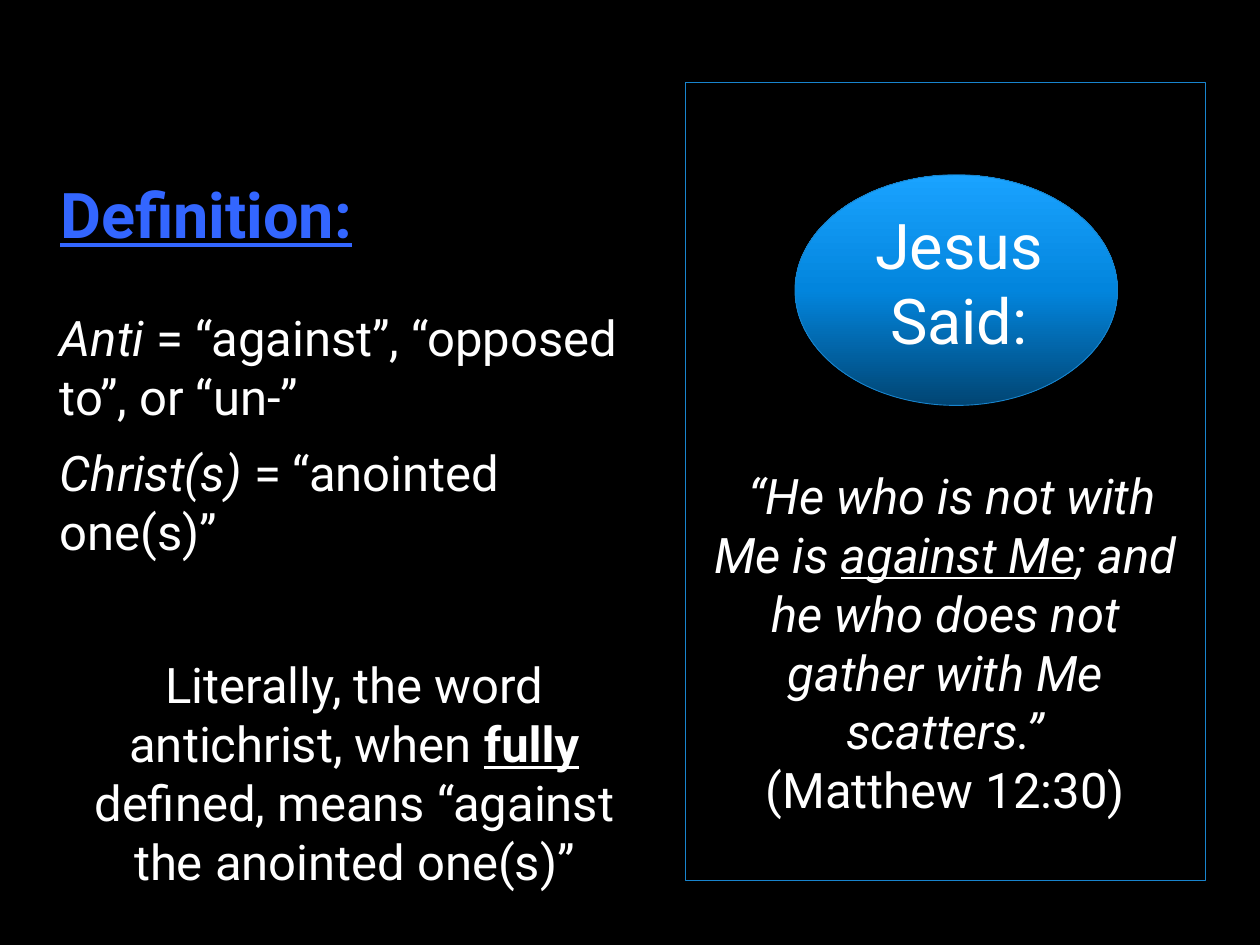
from copy import deepcopy

from pptx import Presentation
from pptx.dml.color import RGBColor
from pptx.enum import shapes, text
from pptx.oxml.ns import qn
from pptx.util import Pt

# Content: paragraphs are (alignment, space before, runs); runs are (text, styles)
FONT = "Roboto"
BLACK, WHITE, HEADING, OUTLINE = "000000", "FFFFFF", "3366FF", "1884CD"
GRADIENT = [(0, "014573"), (0.5, "0285DD"), (1, "1AA3FF")]
LEFT, CENTER = text.PP_ALIGN.LEFT, text.PP_ALIGN.CENTER

TITLE = [(LEFT, 0, [("Definition:", "bu")])]
DEFINITIONS = [
    (LEFT, 0, [("Anti", "i"), (" = “against”, “opposed to”, or “un-”", "")]),
    (LEFT, 10, [("Christ(s)", "i"), (" = “anointed one(s)”", "")]),
    (CENTER, 53.7, [("Literally, the word antichrist, when ", ""), ("fully", "bu"),
                    (" defined, means “against the anointed one(s)”", "")]),
]
SPEAKER = [(CENTER, 0, [("Jesus Said:", "")])]
QUOTE = [
    (CENTER, 0, [("“He who is not with Me is ", "i"), ("against Me", "iu"),
                 ("; and he who does not gather with Me scatters.”", "i")]),
    (CENTER, 0, [("(Matthew 12:30)", "")]),
]

# Places: left, top, width, height in points
TITLE_BOX = (27.2, 55.8, 312.5, 91.4)
DEFINITIONS_BOX = (27.2, 128.6, 350.6, 321.1)
PANEL_BOX = (391.7, 47.1, 297.4, 455.8)
OVAL_BOX = (454.3, 99.9, 184.3, 131.8)
SPEAKER_BOX = (484.3, 114.2, 127.4, 94.3)
QUOTE_BOX = (391.5, 262.5, 297.4, 177.1)
QUOTE_INDENT = 8


def color(value):
    return RGBColor.from_string(value)


def points(box):
    return [Pt(length) for length in box]


def write(shape, paragraphs, size, ink=WHITE):
    frame = shape.text_frame
    frame.word_wrap = True
    frame.auto_size = text.MSO_AUTO_SIZE.NONE
    for index, (alignment, space, runs) in enumerate(paragraphs):
        paragraph = frame.add_paragraph() if index else frame.paragraphs[0]
        paragraph.alignment = alignment
        paragraph.space_before = Pt(space)
        for words, styles in runs:
            run = paragraph.add_run()
            run.text = words
            font = run.font
            font.name, font.size = FONT, Pt(size)
            font.bold, font.italic, font.underline = (s in styles for s in "biu")
            font.color.rgb = color(ink)
    return frame


def add_text(slide, box, paragraphs, size):
    return write(slide.shapes.add_textbox(*points(box)), paragraphs, size)


def indent_first_line(paragraph, indent):
    properties = paragraph._p.get_or_add_pPr()
    properties.set("marL", "0")
    properties.set("indent", str(Pt(indent)))


def add_outlined(slide, kind, box):
    shape = slide.shapes.add_shape(kind, *points(box))
    shape.shadow.inherit = False
    shape.line.color.rgb = color(OUTLINE)
    shape.line.width = Pt(0.5)
    return shape


def fill_gradient(shape, stops, angle):
    fill = shape.fill
    fill.gradient()
    fill.gradient_angle = angle
    stop_list = next(shape._element.spPr.iter(qn("a:gsLst")))
    while len(stop_list) < len(stops):
        stop_list.append(deepcopy(stop_list[0]))
    for stop, (position, value) in zip(fill.gradient_stops, stops):
        stop.position = position
        stop.color.rgb = color(value)


def main():
    presentation = Presentation()
    presentation.slide_width, presentation.slide_height = Pt(720), Pt(540)
    slide = presentation.slides.add_slide(presentation.slide_layouts[5])
    slide.background.fill.solid()
    slide.background.fill.fore_color.rgb = color(BLACK)

    # Definition side
    title = slide.shapes.title
    title.left, title.top, title.width, title.height = points(TITLE_BOX)
    write(title, TITLE, 36, HEADING).vertical_anchor = text.MSO_ANCHOR.BOTTOM
    definitions = add_text(slide, DEFINITIONS_BOX, DEFINITIONS, 28)
    definitions.margin_top = Pt(47.3)

    # Quotation panel
    panel = add_outlined(slide, shapes.MSO_SHAPE.RECTANGLE, PANEL_BOX)
    panel.fill.solid()
    panel.fill.fore_color.rgb = color(BLACK)
    oval = add_outlined(slide, shapes.MSO_SHAPE.OVAL, OVAL_BOX)
    fill_gradient(oval, GRADIENT, 90)
    add_text(slide, SPEAKER_BOX, SPEAKER, 36)
    quote = add_text(slide, QUOTE_BOX, QUOTE, 28)
    indent_first_line(quote.paragraphs[0], QUOTE_INDENT)

    presentation.save("out.pptx")


if __name__ == "__main__":
    main()
